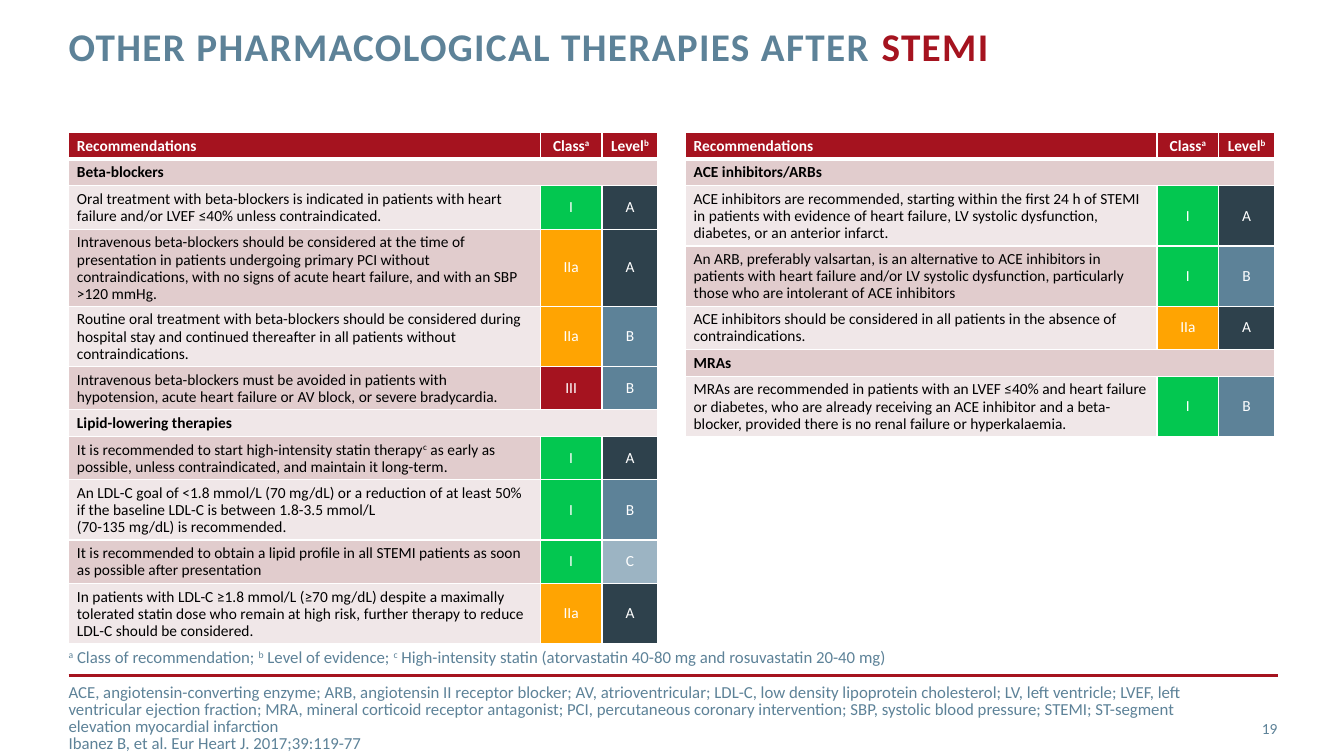
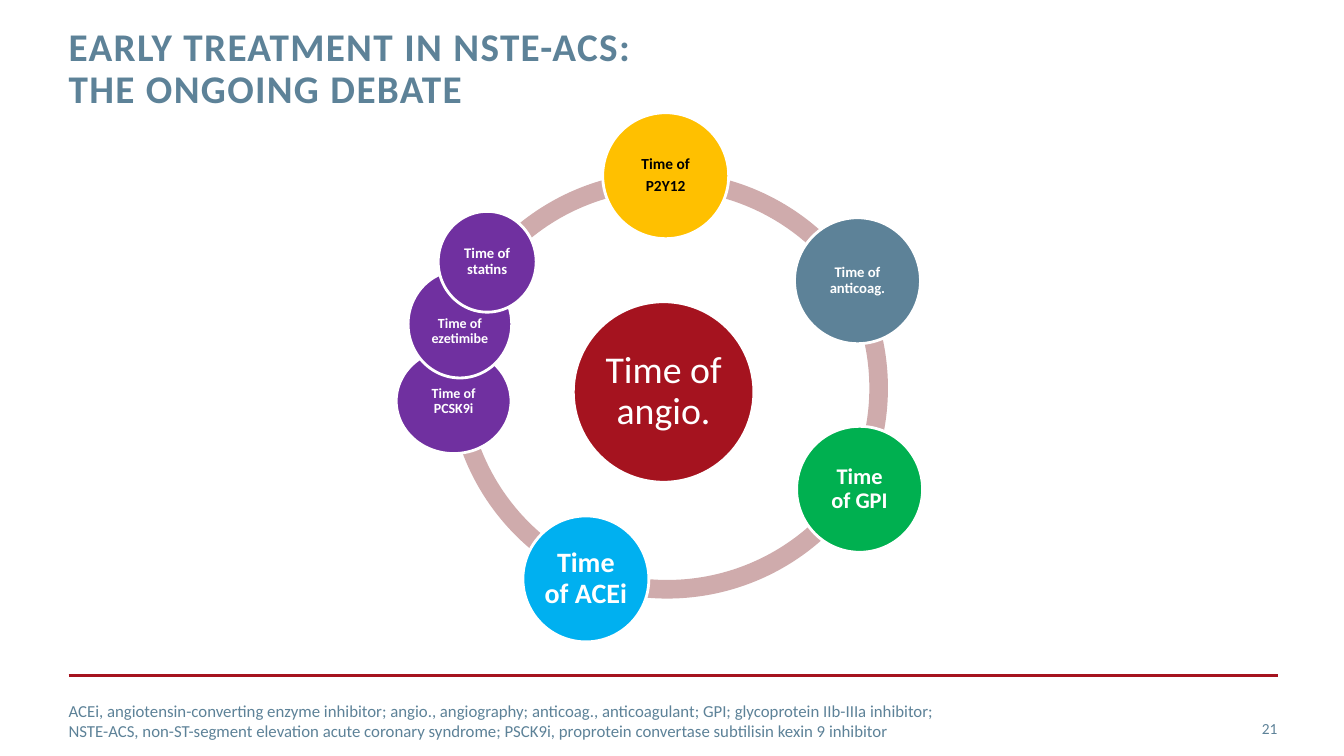
import pptx
import pptx.dml.color
import pptx.enum.shapes
import pptx.enum.text
import pptx.oxml
import pptx.oxml.ns
import pptx.util
from lxml import etree

Pt = pptx.util.Pt
ALIGN = pptx.enum.text.PP_ALIGN
ANCHOR = pptx.enum.text.MSO_ANCHOR
SHAPE = pptx.enum.shapes.MSO_SHAPE
BLUE, RED, WHITE, BLACK = "5D8298", "A5131F", "FFFFFF", "000000"
DARK, GREEN, AMBER = "2E414C", "03C750", "FFA402"
CLASS_FILLS = {"I": GREEN, "IIa": AMBER, "III": RED}
LEVEL_FILLS = {"A": DARK, "B": BLUE, "C": "9CB4C3"}
BAND_FILLS = ["F0E7E8", "E1CCCD"]
LEFT = 49


def colour(value):
    return pptx.dml.color.RGBColor.from_string(value)


def write(frame, text, size=12, ink=BLUE, bold=False, align=ALIGN.LEFT, line_spacing=1.0,
          space_after=0, tracking=0, accent=None):
    """Fill a text frame: newline starts a paragraph, vertical tab breaks a line.

    Text between carets takes the accent colour or, without one, is superscript.
    """
    for index, line in enumerate(text.split("\n")):
        paragraph = frame.add_paragraph() if index else frame.paragraphs[0]
        paragraph.alignment = align
        paragraph.line_spacing = line_spacing
        paragraph.space_after = Pt(space_after)
        for part_index, part in enumerate(line.split("^")):
            marked = part_index % 2 == 1
            for piece_index, piece in enumerate(part.split("\v")):
                if piece_index:
                    paragraph.add_line_break()
                if not piece:
                    continue
                run = paragraph.add_run()
                run.text = piece
                run.font.name = "Calibri"
                run.font.size = Pt(size)
                run.font.bold = bold
                run.font.color.rgb = colour(accent if marked and accent else ink)
                properties = run.font._element
                if tracking:
                    properties.set("spc", str(tracking * 100))
                if marked and not accent:
                    properties.set("baseline", "30000")


presentation = pptx.Presentation()
presentation.slide_width, presentation.slide_height = Pt(960), Pt(540)

# Shared frame: rule, title, slide number and footer texts (top, width, text, line spacing)
slide_texts = [
    ("OTHER PHARMACOLOGICAL THERAPIES AFTER ^STEMI^", "19", [
        (499, 834, "ACE, angiotensin-converting enzyme; ARB, angiotensin II receptor blocker; "
         "AV, atrioventricular; LDL-C, low density lipoprotein cholesterol; LV, left ventricle; "
         "LVEF, left ventricular ejection fraction; MRA, mineral corticoid receptor antagonist; "
         "PCI, percutaneous coronary intervention; SBP, systolic blood pressure; STEMI; "
         "ST-segment elevation myocardial infarction\n"
         "Ibanez B, et al. Eur Heart J. 2017;39:119-77", 0.85),
        (456, 834, "^a^ Class of recommendation; ^b^ Level of evidence; ^c^ High-intensity statin "
         "(atorvastatin 40-80 mg and rosuvastatin 20-40 mg)", 0.85),
    ]),
    ("EARLY TREATMENT IN NSTE-ACS:\vTHE ONGOING DEBATE", "21", [
        (500.5, 720, "ACEi, angiotensin-converting enzyme inhibitor; angio., angiography; "
         "anticoag., anticoagulant; GPI; glycoprotein IIb-IIIa inhibitor;\v"
         "NSTE-ACS, non-ST-segment elevation acute coronary syndrome; "
         "PSCK9i, proprotein convertase subtilisin kexin 9 inhibitor", 1.0),
    ]),
]
slides = []
for title, number, footers in slide_texts:
    slide = presentation.slides.add_slide(presentation.slide_layouts[6])
    slides.append(slide)
    rule = slide.shapes.add_connector(
        pptx.enum.shapes.MSO_CONNECTOR.STRAIGHT, Pt(LEFT), Pt(482.5), Pt(913), Pt(482.5))
    rule.line.color.rgb = colour(RED)
    rule.line.width = Pt(2)
    etree.SubElement(rule._element.spPr, pptx.oxml.ns.qn("a:effectLst"))
    boxes = [
        (LEFT, 19.5, 688, 63, title, ANCHOR.TOP,
         dict(size=28, bold=True, line_spacing=Pt(30), tracking=1, accent=RED)),
        (850, 506, 62.5, 29, number, ANCHOR.MIDDLE, dict(size=11, align=ALIGN.RIGHT)),
    ]
    for top, width, text, spacing in footers:
        boxes.append((LEFT, top, width, 29, text, ANCHOR.MIDDLE, dict(line_spacing=spacing)))
    for left, top, width, height, text, anchor, text_format in boxes:
        frame = slide.shapes.add_textbox(Pt(left), Pt(top), Pt(width), Pt(height)).text_frame
        frame.word_wrap = True
        frame.vertical_anchor = anchor
        frame.margin_left = frame.margin_right = frame.margin_top = frame.margin_bottom = 0
        write(frame, text, **text_format)

# Recommendation tables: (text, lines, class, level); a row with text alone is a section
HEADER = ("Recommendations", 1, "Class^a^", "Level^b^")
beta_blockers_and_lipids = [
    HEADER,
    ("Beta-blockers",),
    ("Oral treatment with beta-blockers is indicated in patients with heart failure and/or "
     "LVEF ≤40% unless contraindicated.", 2, "I", "A"),
    ("Intravenous beta-blockers should be considered at the time of presentation in patients "
     "undergoing primary PCI without contraindications, with no signs of acute heart failure, "
     "and with an SBP >120 mmHg.", 4, "IIa", "A"),
    ("Routine oral treatment with beta-blockers should be considered during hospital stay and "
     "continued thereafter in all patients without contraindications.", 3, "IIa", "B"),
    ("Intravenous beta-blockers must be avoided in patients with hypotension, acute heart "
     "failure or AV block, or severe bradycardia.", 2, "III", "B"),
    ("Lipid-lowering therapies",),
    ("It is recommended to start high-intensity statin therapy^c^ as early as possible, unless "
     "contraindicated, and maintain it long-term.", 2, "I", "A"),
    ("An LDL-C goal of <1.8 mmol/L (70 mg/dL) or a reduction of at least 50% if the baseline "
     "LDL-C is between 1.8-3.5 mmol/L\v(70-135 mg/dL) is recommended.", 3, "I", "B"),
    ("It is recommended to obtain a lipid profile in all STEMI patients as soon as possible "
     "after presentation", 2, "I", "C"),
    ("In patients with LDL-C ≥1.8 mmol/L (≥70 mg/dL) despite a maximally tolerated statin dose "
     "who remain at high risk, further therapy to reduce LDL-C should be considered.",
     3, "IIa", "A"),
]
ace_inhibitors_and_mras = [
    HEADER,
    ("ACE inhibitors/ARBs",),
    ("ACE inhibitors are recommended, starting within the first 24 h of STEMI in patients with "
     "evidence of heart failure, LV systolic dysfunction, diabetes, or an anterior infarct.",
     3, "I", "A"),
    ("An ARB, preferably valsartan, is an alternative to ACE inhibitors in patients with heart "
     "failure and/or LV systolic dysfunction, particularly those who are intolerant of ACE "
     "inhibitors", 3, "I", "B"),
    ("ACE inhibitors should be considered in all patients in the absence of contraindications.",
     2, "IIa", "A"),
    ("MRAs",),
    ("MRAs are recommended in patients with an LVEF ≤40% and heart failure or diabetes, who are "
     "already receiving an ACE inhibitor and a beta-blocker, provided there is no renal failure "
     "or hyperkalaemia.", 3, "I", "B"),
]
column_widths = [337, 44, 40]
for left, rows in [(LEFT, beta_blockers_and_lipids), (489.5, ace_inhibitors_and_mras)]:
    heights = [19 + 12 * (row[1] - 1) if len(row) > 1 else 19 for row in rows]
    table = slides[0].shapes.add_table(
        len(rows), 3, Pt(left), Pt(94.5), Pt(sum(column_widths)), Pt(sum(heights))).table
    table.first_row = table.horz_banding = False
    for column, width in zip(table.columns, column_widths):
        column.width = Pt(width)
    for row_index, row in enumerate(rows):
        table.rows[row_index].height = Pt(heights[row_index])
        is_header, is_section = row_index == 0, len(row) == 1
        if is_section:
            table.cell(row_index, 0).merge(table.cell(row_index, 2))
        texts = [row[0], "", ""] if is_section else [row[0], row[2], row[3]]
        band = BAND_FILLS[row_index % 2]
        fills = [band, CLASS_FILLS.get(texts[1], band), LEVEL_FILLS.get(texts[2], band)]
        for column_index, text in enumerate(texts):
            cell = table.cell(row_index, column_index)
            is_grade = column_index > 0
            cell.fill.solid()
            cell.fill.fore_color.rgb = colour(RED if is_header else fills[column_index])
            cell.margin_top = cell.margin_bottom = Pt(3.6)
            cell.margin_left = cell.margin_right = Pt(2 if is_header and is_grade else 6)
            cell.vertical_anchor = ANCHOR.MIDDLE if is_grade and not is_header else ANCHOR.TOP
            write(cell.text_frame, text, size=11, line_spacing=0.9,
                  ink=WHITE if is_header or is_grade else BLACK, bold=is_header or is_section,
                  align=ALIGN.CENTER if is_grade else ALIGN.LEFT)
            cell_properties = cell._tc.get_or_add_tcPr()
            for side_index, side in enumerate("LRTB"):
                width = Pt(3 if is_header and side == "B" else 1)
                cell_properties.insert(side_index, pptx.oxml.parse_xml(
                    f'<a:ln{side} {pptx.oxml.ns.nsdecls("a")} w="{width}"><a:solidFill>'
                    f'<a:srgbClr val="{WHITE}"/></a:solidFill></a:ln{side}>'))

# Ring segments: left, top, start and end angle in degrees
ring_size = 332.6
ring_segments = [
    (309.6, 122.4, 218.57, 270),
    (319.7, 98.6, 114.19, 172.36),
    (310.3, 95, 32.72, 110.8),
    (301.7, 110.9, 332.13, 26.35),
    (308.9, 122.4, 270.33, 327.27),
]
for left, top, start, end in ring_segments:
    segment = slides[1].shapes.add_shape(
        SHAPE.BLOCK_ARC, Pt(left), Pt(top), Pt(ring_size), Pt(ring_size))
    segment.shadow.inherit = False
    segment.fill.solid()
    segment.fill.fore_color.rgb = colour("CFABAC")
    segment.line.fill.background()
    # Angles are stored in 60000ths of a degree and exposed divided by 100000
    segment.adjustments[0] = start * 0.6
    segment.adjustments[1] = end * 0.6
    segment.adjustments[2] = 0.04

# Circles: left, top, width, height, fill, text, size, text colour, bold, top margin
PURPLE = "7030A0"
circles = [
    (409.5, 215.5, 129, 129, RED, "Time of\vangio.", 27, WHITE, False, 0),
    (430.5, 80.5, 90, 90, "FFC000", "Time of\nP2Y12", 11, BLACK, True, 0),
    (567.5, 155.5, 90, 90, BLUE, "Time of\vanticoag.", 10.5, WHITE, True, 0),
    (569, 304.5, 90, 90, "00B050", "Time\vof GPI", 16, WHITE, True, 0),
    (373.5, 368.5, 90, 90, "00B0F0", "Time\vof ACEi", 20, WHITE, True, 0),
    (283, 249, 82, 75, PURPLE, "Time of\vPCSK9i", 10, WHITE, True, 0),
    (291.5, 193, 74, 77, PURPLE, "Time of\vezetimibe", 10, WHITE, True, 11),
    (313, 151, 70, 72, PURPLE, "Time of\vstatins", 10.5, WHITE, True, 0),
]
for left, top, width, height, fill, text, size, ink, bold, margin_top in circles:
    circle = slides[1].shapes.add_shape(SHAPE.OVAL, Pt(left), Pt(top), Pt(width), Pt(height))
    circle.shadow.inherit = False
    circle.fill.solid()
    circle.fill.fore_color.rgb = colour(fill)
    circle.line.color.rgb = colour(WHITE)
    circle.line.width = Pt(2)
    frame = circle.text_frame
    frame.word_wrap = True
    frame.vertical_anchor = ANCHOR.MIDDLE
    frame.margin_left = frame.margin_right = frame.margin_bottom = 0
    frame.margin_top = Pt(margin_top)
    write(frame, text, size=size, ink=ink, bold=bold, align=ALIGN.CENTER, line_spacing=0.9,
          space_after=4 if "\n" in text else 0)

presentation.save("out.pptx")
